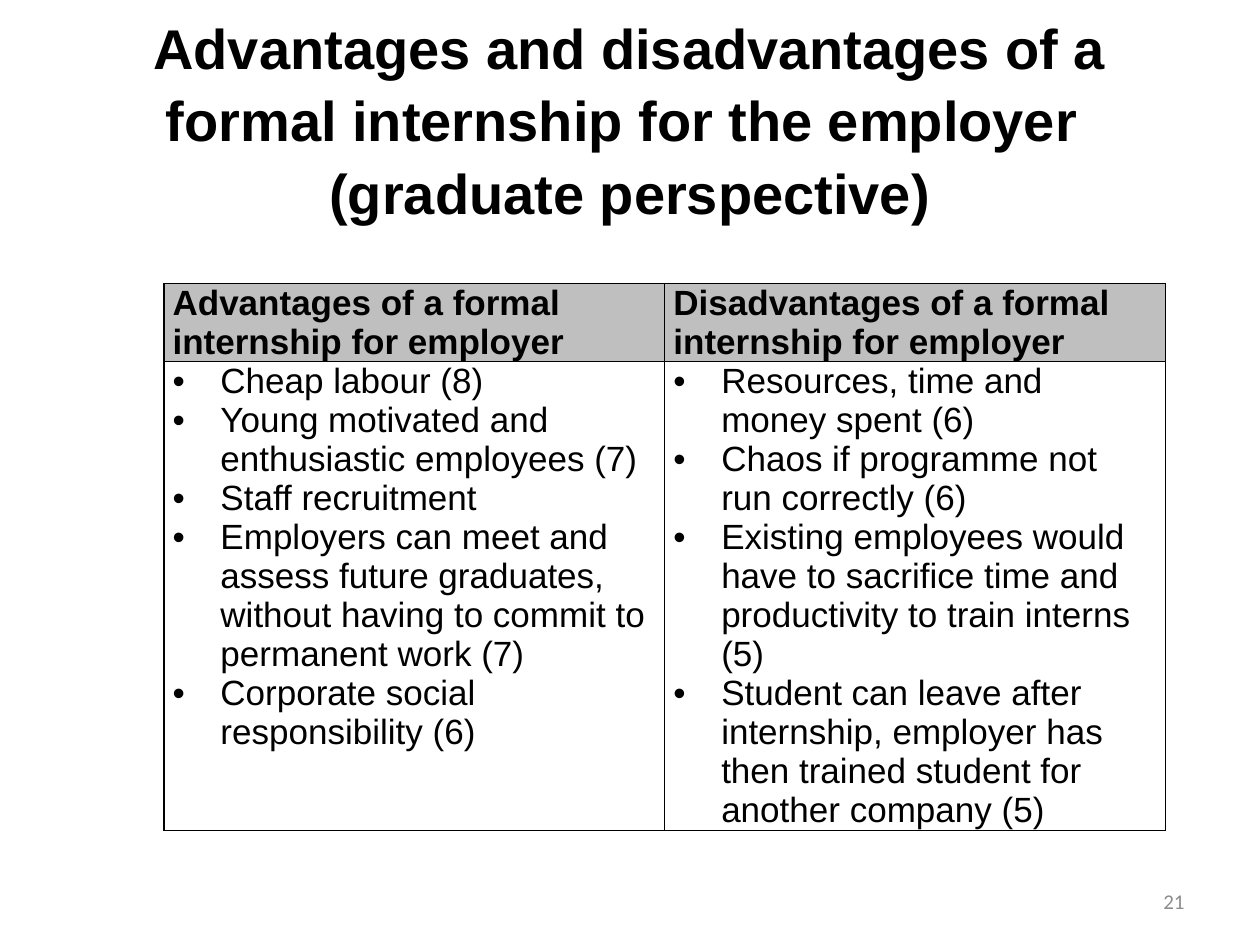
from pptx import Presentation
from pptx.dml.color import RGBColor as Rgb
from pptx.enum.text import MSO_ANCHOR as Anchor, MSO_AUTO_SIZE as Fit, PP_ALIGN as Align
from pptx.oxml import parse_xml
from pptx.oxml.ns import nsdecls
from pptx.util import Inches, Pt

TITLE = "Advantages and disadvantages of a formal internship for the employer \v(graduate perspective)"
COLS = [
    ("Advantages of a formal internship for employer", [
        "Cheap labour (8)",
        "Young motivated and enthusiastic employees (7)",
        "Staff recruitment",
        "Employers can meet and assess future graduates, without having to commit to permanent work (7)",
        "Corporate social responsibility (6)",
    ]),
    ("Disadvantages of a formal internship for employer", [
        "Resources, time and money spent (6)",
        "Chaos if programme not run correctly (6)",
        "Existing employees would have to sacrifice time and productivity to train interns (5)",
        "Student can leave after internship, employer has then trained student for another company (5)",
    ]),
]
PAGE = "21"
HEX = {"text": "000000", "head": "BFBFBF", "body": "FFFFFF", "page": "8C8C8C"}
ROWS = [0.62, 3.72]
WIDTH = 7.95


def style(para, size, name="Arial", color="text", bold=False):
    font = para.font
    font.size, font.name, font.bold = Pt(size), name, bold
    font.color.rgb = Rgb.from_string(HEX[color])


def bullet(para):
    props = para._p.get_or_add_pPr()
    props.set("marL", str(Inches(0.38)))
    props.set("indent", str(-Inches(0.38)))
    for tag in ('buFont %s typeface="Arial"', 'buChar %s char="•"'):
        props.append(parse_xml(f"<a:{tag % nsdecls('a')}/>"))


def border(cell):
    props = cell._tc.get_or_add_tcPr()
    for at, side in enumerate(("lnL", "lnR", "lnT", "lnB")):
        props.insert(at, parse_xml(
            f'<a:{side} {nsdecls("a")} w="{Pt(1)}"><a:solidFill>'
            f'<a:srgbClr val="{HEX["text"]}"/></a:solidFill></a:{side}>'))


def fill_cell(cell, lines, head):
    cell.margin_left = cell.margin_right = Inches(0.07)
    cell.margin_top = cell.margin_bottom = 0
    cell.fill.solid()
    cell.fill.fore_color.rgb = Rgb.from_string(HEX["head" if head else "body"])
    border(cell)
    frame = cell.text_frame
    frame.text = "\n".join(lines)
    for para in frame.paragraphs:
        if not head:
            bullet(para)
        style(para, 20, bold=head)


def main():
    deck = Presentation()
    deck.slide_width, deck.slide_height = Inches(10), Inches(7.5)
    slide = deck.slides.add_slide(deck.slide_layouts[5])

    title = slide.shapes.title
    title.left, title.top = Inches(0.5), Inches(0.3)
    title.width, title.height = Inches(9), Inches(1.25)
    frame = title.text_frame
    frame.text = TITLE
    frame.auto_size, frame.vertical_anchor = Fit.NONE, Anchor.MIDDLE
    para = frame.paragraphs[0]
    para.alignment, para.line_spacing = Align.CENTER, 1.08
    style(para, 32, bold=True)

    table = slide.shapes.add_table(
        len(ROWS), len(COLS), Inches(1.3), Inches(2.25), Inches(WIDTH), Inches(sum(ROWS))).table
    for row, height in zip(table.rows, ROWS):
        row.height = Inches(height)
    for col, (head, items) in enumerate(COLS):
        table.columns[col].width = Inches(WIDTH / len(COLS))
        fill_cell(table.cell(0, col), [head], True)
        fill_cell(table.cell(1, col), items, False)

    box = slide.shapes.add_textbox(Inches(7.17), Inches(6.95), Inches(2.33), Inches(0.4))
    frame = box.text_frame
    frame.text = PAGE
    frame.word_wrap, frame.vertical_anchor = True, Anchor.MIDDLE
    para = frame.paragraphs[0]
    para.alignment = Align.RIGHT
    style(para, 12, "Calibri", "page")

    deck.save("out.pptx")


if __name__ == "__main__":
    main()
